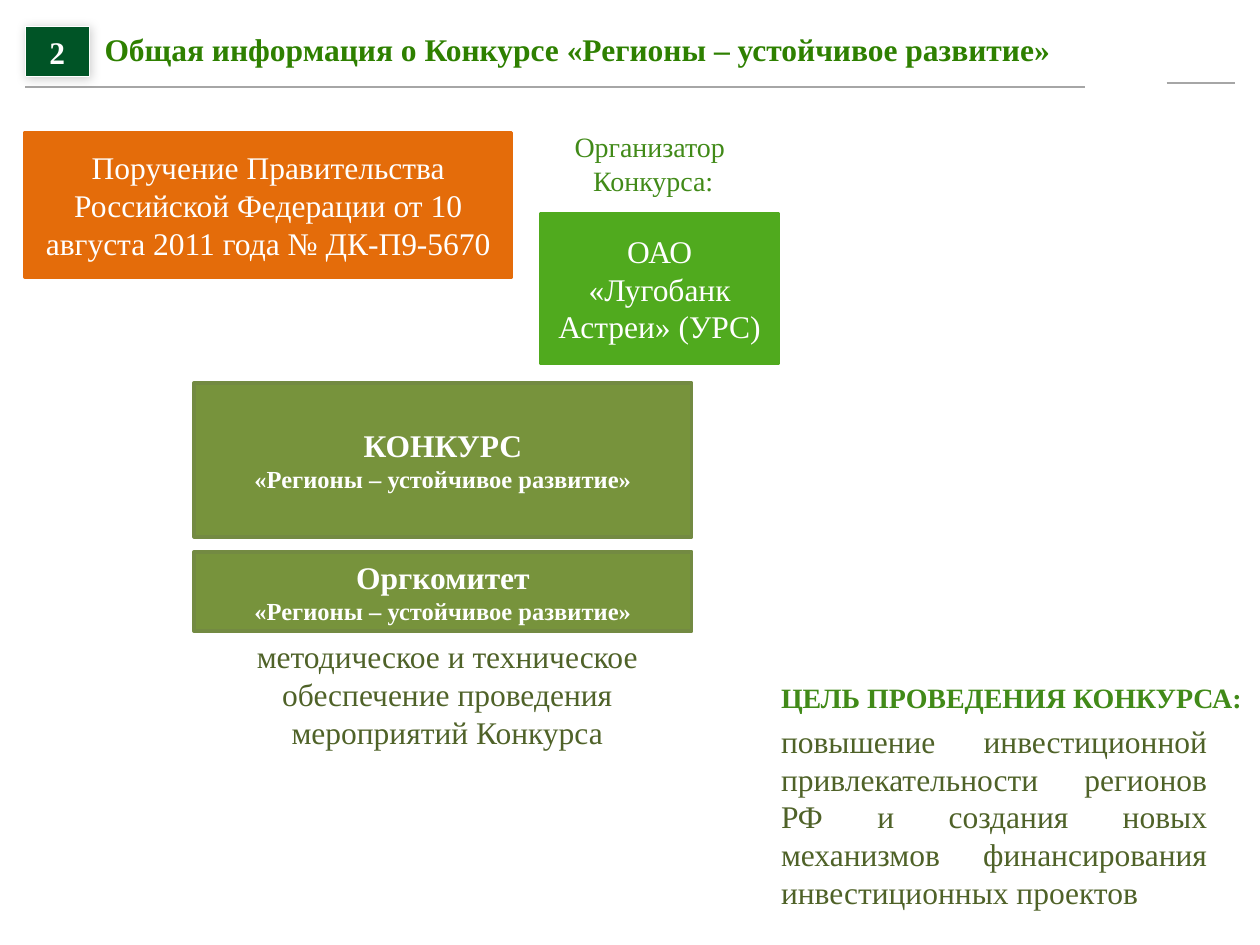
from dataclasses import dataclass
from typing import Optional

from lxml import etree
from pptx import Presentation
from pptx import util as u
from pptx.dml.color import RGBColor
from pptx.enum import shapes, text
from pptx.oxml import ns


@dataclass(frozen=True)
class Theme:
    font: str = "Times New Roman"
    white: str = "FFFFFF"
    rule: str = "A6A6A6"
    title: str = "2E8000"
    label: str = "418A18"
    body: str = "4F6228"
    bright: str = "50AA1E"
    olive: str = "77933C"
    edge: str = "738A42"
    orange: str = "E46C0A"
    dark: str = "005426"
    big: int = 18
    mid: int = 16
    small: int = 14


T = Theme()
MID, TOP = text.MSO_ANCHOR.MIDDLE, text.MSO_ANCHOR.TOP
LEFT, CENTER, FULL = text.PP_ALIGN.LEFT, text.PP_ALIGN.CENTER, text.PP_ALIGN.JUSTIFY


@dataclass(frozen=True)
class Line:
    words: str
    size: int = T.big


@dataclass(frozen=True)
class Box:
    at: tuple[float, float, float, float]
    lines: tuple[Line, ...]
    color: str = T.white
    bold: bool = False
    align: text.PP_ALIGN = CENTER
    anchor: text.MSO_ANCHOR = TOP
    fill: Optional[str] = None
    edge: Optional[str] = None
    width: float = 2
    wrap: bool = True
    grow: bool = False
    inset: bool = True
    shade: bool = False
    glow: bool = False


MOTTO = Line("«Регионы – устойчивое развитие»", T.small)
BOXES = (
    Box((0.83, 0.11, 7.66, 0.56),
        (Line("Общая информация о Конкурсе «Регионы – устойчивое развитие»"),),
        T.title, bold=True, align=LEFT, anchor=MID, inset=False),
    Box((4.29, 1.7, 1.89, 1.18), (Line("ОАО «Лугобанк Астреи» (УРС)"),),
        anchor=MID, fill=T.bright, edge=T.bright),
    Box((4.45, 0.98, 1.47, 0.64),
        (Line("Организатор ", T.mid), Line("Конкурса:", T.mid)),
        T.label, wrap=False, grow=True),
    Box((1.54, 3.04, 3.95, 1.22), (Line("КОНКУРС"), MOTTO),
        bold=True, anchor=MID, fill=T.olive, edge=T.edge),
    Box((0.2, 1.05, 3.86, 1.15),
        (Line("Поручение Правительства Российской Федерации от 10 августа 2011 года № ДК-П9-5670"),),
        anchor=MID, fill=T.orange, edge=T.orange),
    Box((6.1, 5.68, 3.58, 1.62),
        (Line("повышение инвестиционной привлекательности регионов РФ и создания новых "
              "механизмов финансирования инвестиционных проектов"),),
        T.body, align=FULL, grow=True),
    Box((1.54, 5.01, 4.02, 1.01),
        (Line("методическое и техническое обеспечение проведения мероприятий Конкурса"),),
        T.body, fill=T.white, grow=True),
    Box((1.54, 4.38, 3.95, 0.63), (Line("Оргкомитет"), MOTTO),
        bold=True, anchor=MID, fill=T.olive, edge=T.edge),
    Box((6.1, 5.35, 3.91, 0.37), (Line("ЦЕЛЬ ПРОВЕДЕНИЯ КОНКУРСА:", T.mid),),
        T.label, bold=True, align=LEFT, wrap=False, grow=True, glow=True),
    Box((0.2, 0.21, 0.51, 0.4), (Line("2"),), bold=True, fill=T.dark,
        edge=T.white, width=0.75, grow=True, shade=True),
)


def cast(blur: float, dist: float, turn: int, alpha: int) -> etree.ElementBase:
    root = etree.Element(ns.qn("a:effectLst"))
    drop = etree.SubElement(root, ns.qn("a:outerShdw"), blurRad=str(u.Pt(blur)),
                            dist=str(u.Pt(dist)), dir=str(turn * 60000))
    tint = etree.SubElement(drop, ns.qn("a:srgbClr"), val="000000")
    etree.SubElement(tint, ns.qn("a:alpha"), val=str(alpha * 1000))
    return root


def draw_rule(page, left: float, right: float, top: float) -> None:
    rule = page.shapes.add_connector(
        shapes.MSO_CONNECTOR.STRAIGHT,
        u.Inches(left), u.Inches(top), u.Inches(right), u.Inches(top))
    rule.line.color.rgb = RGBColor.from_string(T.rule)
    rule.line.width = u.Pt(1)
    etree.SubElement(rule._element.spPr, ns.qn("a:effectLst"))


def write(frame, box: Box) -> None:
    frame.word_wrap = box.wrap
    frame.auto_size = (text.MSO_AUTO_SIZE.SHAPE_TO_FIT_TEXT if box.grow
                       else text.MSO_AUTO_SIZE.NONE)
    frame.vertical_anchor = box.anchor
    if not box.inset:
        frame.margin_left = frame.margin_right = 0
        frame.margin_top = frame.margin_bottom = 0
    for i, line in enumerate(box.lines):
        para = frame.add_paragraph() if i else frame.paragraphs[0]
        para.alignment = box.align
        run = para.add_run()
        run.text = line.words
        font = run.font
        font.size, font.bold, font.name = u.Pt(line.size), box.bold, T.font
        font.color.rgb = RGBColor.from_string(box.color)
        if box.glow:
            run._r.rPr.find(ns.qn("a:solidFill")).addnext(cast(3, 3, 45, 43))


def draw_box(page, box: Box) -> None:
    place = [u.Inches(n) for n in box.at]
    if box.fill is None:
        item = page.shapes.add_textbox(*place)
    else:
        item = page.shapes.add_shape(shapes.MSO_SHAPE.RECTANGLE, *place)
        item.fill.solid()
        item.fill.fore_color.rgb = RGBColor.from_string(box.fill)
        if box.edge is None:
            item.line.fill.background()
        else:
            item.line.color.rgb = RGBColor.from_string(box.edge)
            item.line.width = u.Pt(box.width)
        if box.shade:
            item._element.spPr.append(cast(6, 1, 45, 20))
        else:
            item.shadow.inherit = False
    write(item.text_frame, box)


def main() -> None:
    deck = Presentation()
    deck.slide_width, deck.slide_height = u.Inches(10), u.Inches(7.5)
    page = deck.slides.add_slide(deck.slide_layouts[6])
    draw_rule(page, 0.2, 8.61, 0.69)
    draw_rule(page, 9.26, 9.8, 0.66)
    for box in BOXES:
        draw_box(page, box)
    deck.save("out.pptx")


if __name__ == "__main__":
    main()
